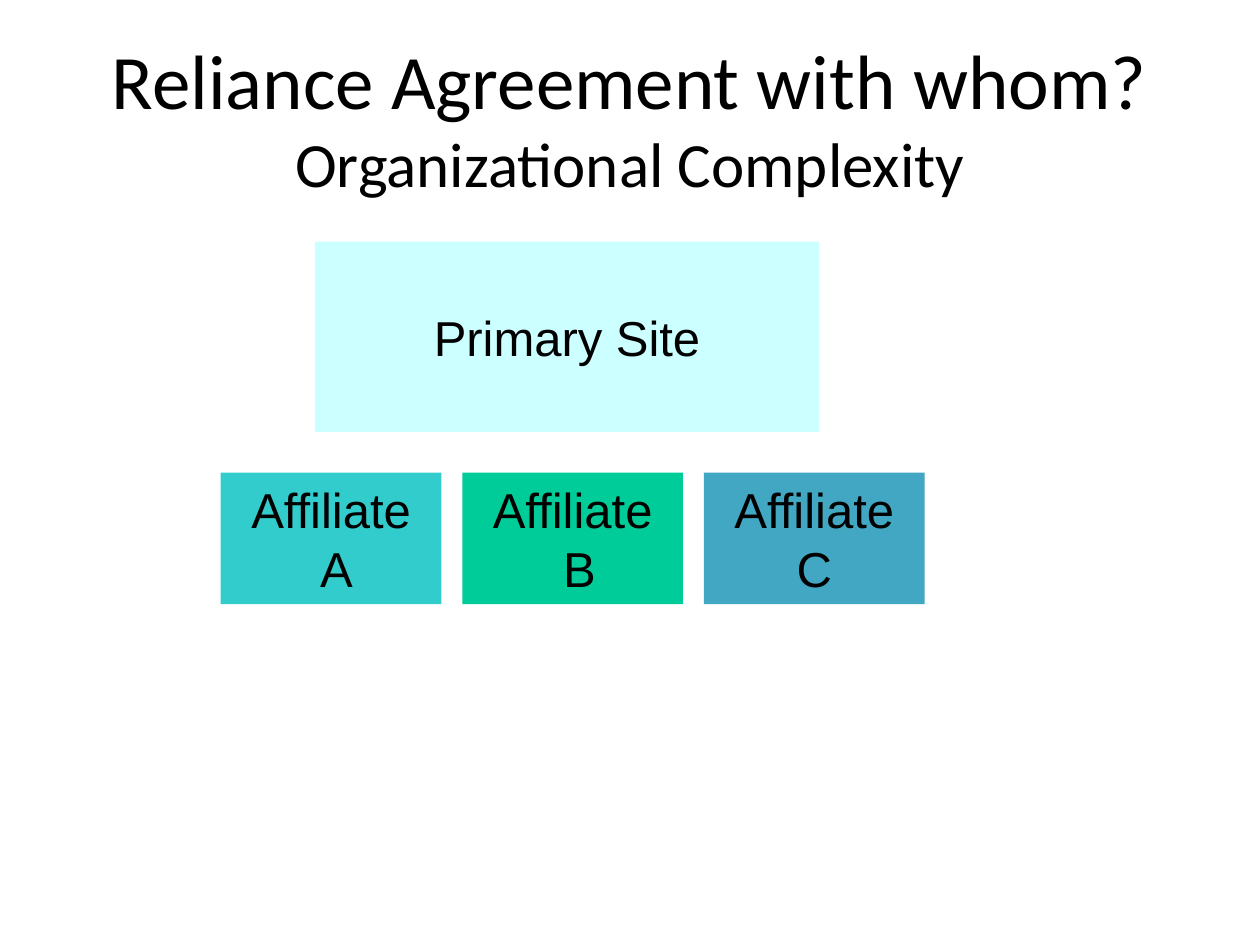
from dataclasses import dataclass

from pptx import Presentation
from pptx.dml.color import RGBColor
from pptx.enum.shapes import MSO_SHAPE
from pptx.enum.text import MSO_ANCHOR, PP_ALIGN
from pptx.slide import Slide
from pptx.util import Cm, Pt


def color(hex_code):
    return RGBColor.from_string(hex_code)


@dataclass
class SlideBuilder:
    slide: Slide
    title_font: str = "Calibri"
    box_font: str = "Arial"
    ink: str = "000000"
    box_size: int = 28

    def style(self, paragraph, font_name):
        paragraph.alignment = PP_ALIGN.CENTER
        paragraph.font.name = font_name
        paragraph.font.color.rgb = color(self.ink)

    def title(self, heading, subheading, left, top, width, height):
        frame = self.slide.shapes.add_textbox(left, top, width, height).text_frame
        frame.word_wrap = True
        frame.vertical_anchor = MSO_ANCHOR.MIDDLE
        paragraph = frame.paragraphs[0]
        self.style(paragraph, self.title_font)
        heading_run = paragraph.add_run()
        heading_run.text = heading
        heading_run.font.size = Pt(44)
        paragraph.add_line_break()
        subheading_run = paragraph.add_run()
        subheading_run.text = subheading
        subheading_run.font.size = Pt(36)

    def box(self, text, fill, left, top, width, height):
        site = self.slide.shapes.add_shape(MSO_SHAPE.RECTANGLE, left, top, width, height)
        site.shadow.inherit = False
        site.fill.solid()
        site.fill.fore_color.rgb = color(fill)
        site.line.fill.background()
        frame = site.text_frame
        frame.word_wrap = True
        frame.vertical_anchor = MSO_ANCHOR.MIDDLE
        frame.text = text
        for paragraph in frame.paragraphs:
            self.style(paragraph, self.box_font)
            paragraph.font.size = Pt(self.box_size)


def main():
    deck = Presentation()
    deck.slide_width, deck.slide_height = Cm(25.4), Cm(19.05)
    builder = SlideBuilder(deck.slides.add_slide(deck.slide_layouts[6]))

    # Title
    builder.title("Reliance Agreement with whom?", "Organizational Complexity",
                  Cm(1.27), Cm(0.76), Cm(22.86), Cm(3.18))

    # Primary site
    builder.box("Primary Site", "CCFFFF", Cm(6.35), Cm(4.87), Cm(10.16), Cm(3.84))

    # Row of affiliates
    affiliates = [
        ("Affiliate\n A", "33CCCC"),
        ("Affiliate\n B", "00CC99"),
        ("Affiliate C", "41A7C3"),
    ]
    first_left, pitch = 4.45, 4.87
    for column, (affiliate, fill) in enumerate(affiliates):
        builder.box(affiliate, fill, Cm(first_left + column * pitch), Cm(9.53),
                    Cm(4.45), Cm(2.65))

    deck.save("out.pptx")


if __name__ == "__main__":
    main()
